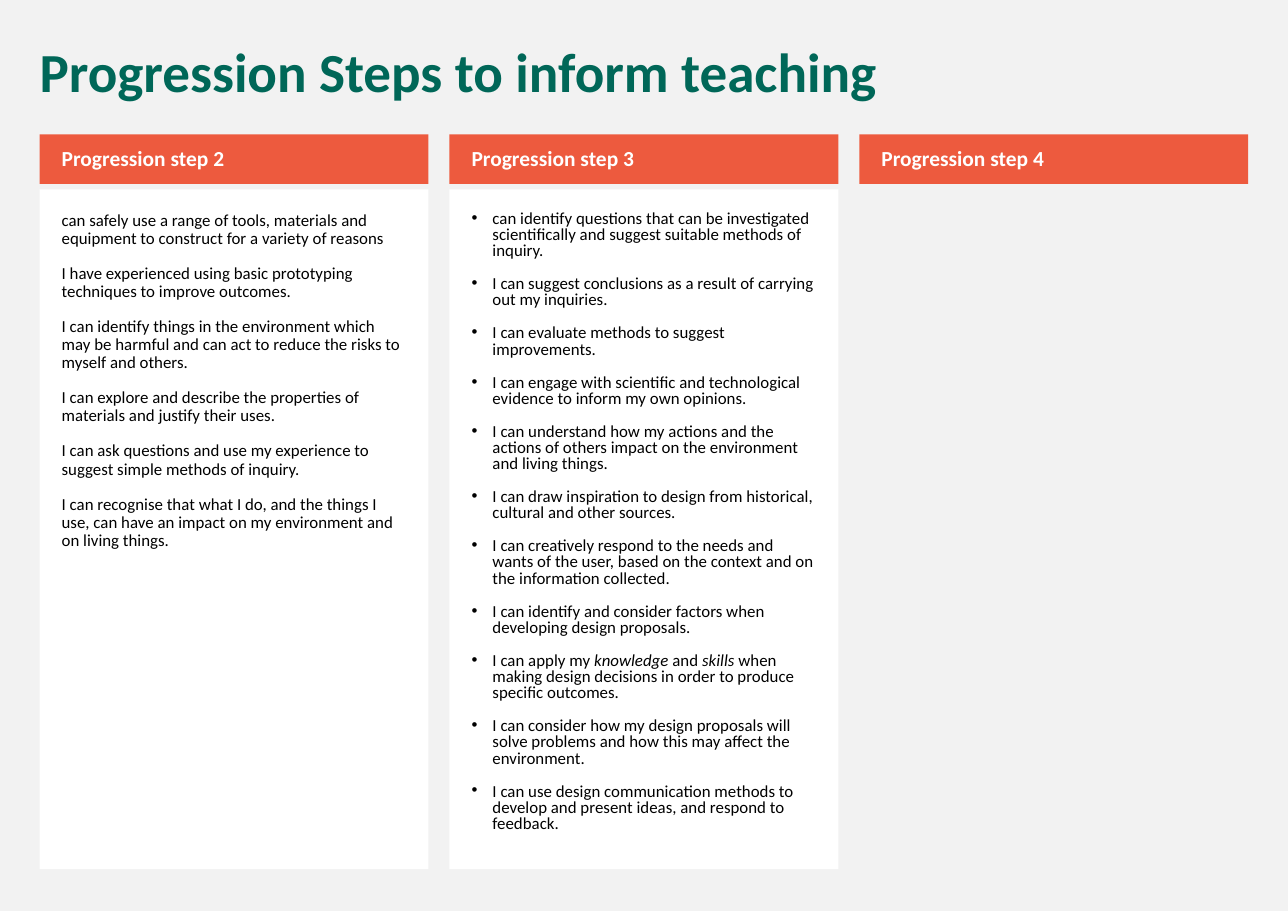
from lxml import etree
from pptx import Presentation
from pptx.dml.color import RGBColor
from pptx.enum.shapes import MSO_SHAPE
from pptx.enum.text import MSO_ANCHOR, MSO_AUTO_SIZE, PP_ALIGN
from pptx.oxml.ns import qn
from pptx.util import Inches, Pt

RECTANGLE = MSO_SHAPE.RECTANGLE
TOP, MIDDLE = MSO_ANCHOR.TOP, MSO_ANCHOR.MIDDLE
NO_AUTOFIT = MSO_AUTO_SIZE.NONE
LEFT = PP_ALIGN.LEFT

GREY = RGBColor(0xF2, 0xF2, 0xF2)
WHITE = RGBColor(0xFF, 0xFF, 0xFF)
BLACK = RGBColor(0, 0, 0)
ORANGE = RGBColor(0xED, 0x5A, 0x3E)
GREEN = RGBColor(0x00, 0x67, 0x58)

TITLE_FONT = {"name": "Calibri", "size": Pt(36), "bold": True}
HEADING_FONT = {"name": "Calibri", "size": Pt(14), "bold": True}
STATEMENT_FONT = {"name": "Calibri", "size": Pt(11), "bold": False}

SLIDE_WIDTH, SLIDE_HEIGHT = 11.69, 8.27
MARGIN = 0.36
COLUMN_COUNT = 3
COLUMN_WIDTH = 3.53
COLUMN_STEP = (SLIDE_WIDTH - 2 * MARGIN - COLUMN_WIDTH) / (COLUMN_COUNT - 1)
TITLE_ROW = (0.36, 0.65)
HEADING_ROW = (1.22, 0.45)
STATEMENT_ROW = (1.72, 6.17)
TITLE_INSETS = (0.1, 0.05, 0.1, 0.05)
HEADING_INSETS = (0.2, 0.05, 0.1, 0.05)
STATEMENT_INSETS = (0.2, 0.2, 0.2, 0.2)
BULLET_INDENT = Inches(0.19)

STEP_2 = [
    "can safely use a range of tools, materials and equipment to construct for a variety of reasons",
    "I have experienced using basic prototyping techniques to improve outcomes.",
    "I can identify things in the environment which may be harmful and can act to reduce the risks to myself and others.",
    "I can explore and describe the properties of materials and justify their uses.",
    "I can ask questions and use my experience to suggest simple methods of inquiry.",
    "I can recognise that what I do, and the things I use, can have an impact on my environment and on living things.",
]
STEP_3 = [
    "can identify questions that can be investigated scientifically and suggest suitable methods of inquiry.",
    "I can suggest conclusions as a result of carrying out my inquiries.",
    "I can evaluate methods to suggest improvements.",
    "I can engage with scientific and technological evidence to inform my own opinions.",
    "I can understand how my actions and the actions of others impact on the environment and living things.",
    "I can draw inspiration to design from historical, cultural and other sources.",
    "I can creatively respond to the needs and wants of the user, based on the context and on the information collected.",
    "I can identify and consider factors when developing design proposals.",
    "I can apply my *knowledge* and *skills* when making design decisions in order to produce specific outcomes.",
    "I can consider how my design proposals will solve problems and how this may affect the environment.",
    "I can use design communication methods to develop and present ideas, and respond to feedback.",
]
STEPS = [
    ("Progression step 2", STEP_2, False),
    ("Progression step 3", STEP_3, True),
    ("Progression step 4", [], False),
]


def apply_format(target, values):
    for attribute, value in values.items():
        setattr(target, attribute, value)


def add_bullet(paragraph):
    properties = paragraph._p.get_or_add_pPr()
    properties.set("marL", str(BULLET_INDENT))
    properties.set("indent", str(-BULLET_INDENT))
    etree.SubElement(properties, qn("a:buFont"), typeface="Arial")
    etree.SubElement(properties, qn("a:buChar"), char="•")


def write_paragraphs(frame, texts, font, color, insets, anchor=TOP, bulleted=False):
    left, top, right, bottom = map(Inches, insets)
    apply_format(frame, {
        "word_wrap": True, "auto_size": NO_AUTOFIT, "vertical_anchor": anchor,
        "margin_left": left, "margin_top": top,
        "margin_right": right, "margin_bottom": bottom,
    })
    for index, text in enumerate(texts):
        paragraph = frame.add_paragraph() if index else frame.paragraphs[0]
        apply_format(paragraph, {
            "alignment": LEFT,
            "line_spacing": 0.8 if bulleted else 0.9,
            "space_before": Pt(11 if index else 0),
        })
        if bulleted:
            add_bullet(paragraph)
        for position, part in enumerate(text.split("*")):
            run = paragraph.add_run()
            run.text = part
            apply_format(run.font, font)
            run.font.italic = position % 2 == 1
            run.font.color.rgb = color


def add_title(slide, text):
    title = slide.shapes.title
    inset = TITLE_INSETS[0]
    top, height = TITLE_ROW
    apply_format(title, {
        "left": Inches(MARGIN - inset), "top": Inches(top),
        "width": Inches(SLIDE_WIDTH - 2 * MARGIN + inset), "height": Inches(height),
    })
    write_paragraphs(title.text_frame, [text], TITLE_FONT, GREEN, TITLE_INSETS)


def add_panel(slide, column, row, fill):
    top, height = row
    left = MARGIN + column * COLUMN_STEP
    panel = slide.shapes.add_shape(
        RECTANGLE, Inches(left), Inches(top), Inches(COLUMN_WIDTH), Inches(height))
    panel.shadow.inherit = False
    panel.fill.solid()
    panel.fill.fore_color.rgb = fill
    panel.line.fill.background()
    return panel.text_frame


def add_step(slide, column, heading, statements, bulleted):
    heading_frame = add_panel(slide, column, HEADING_ROW, ORANGE)
    write_paragraphs(heading_frame, [heading], HEADING_FONT, WHITE, HEADING_INSETS, MIDDLE)
    if statements:
        statement_frame = add_panel(slide, column, STATEMENT_ROW, WHITE)
        write_paragraphs(statement_frame, statements, STATEMENT_FONT, BLACK,
                         STATEMENT_INSETS, bulleted=bulleted)


def main():
    presentation = Presentation()
    presentation.slide_width = Inches(SLIDE_WIDTH)
    presentation.slide_height = Inches(SLIDE_HEIGHT)
    slide = presentation.slides.add_slide(presentation.slide_layouts.get_by_name("Title Only"))
    slide.background.fill.solid()
    slide.background.fill.fore_color.rgb = GREY
    add_title(slide, "Progression Steps to inform teaching")
    for column, (heading, statements, bulleted) in enumerate(STEPS):
        add_step(slide, column, heading, statements, bulleted)
    presentation.save("out.pptx")


if __name__ == "__main__":
    main()
